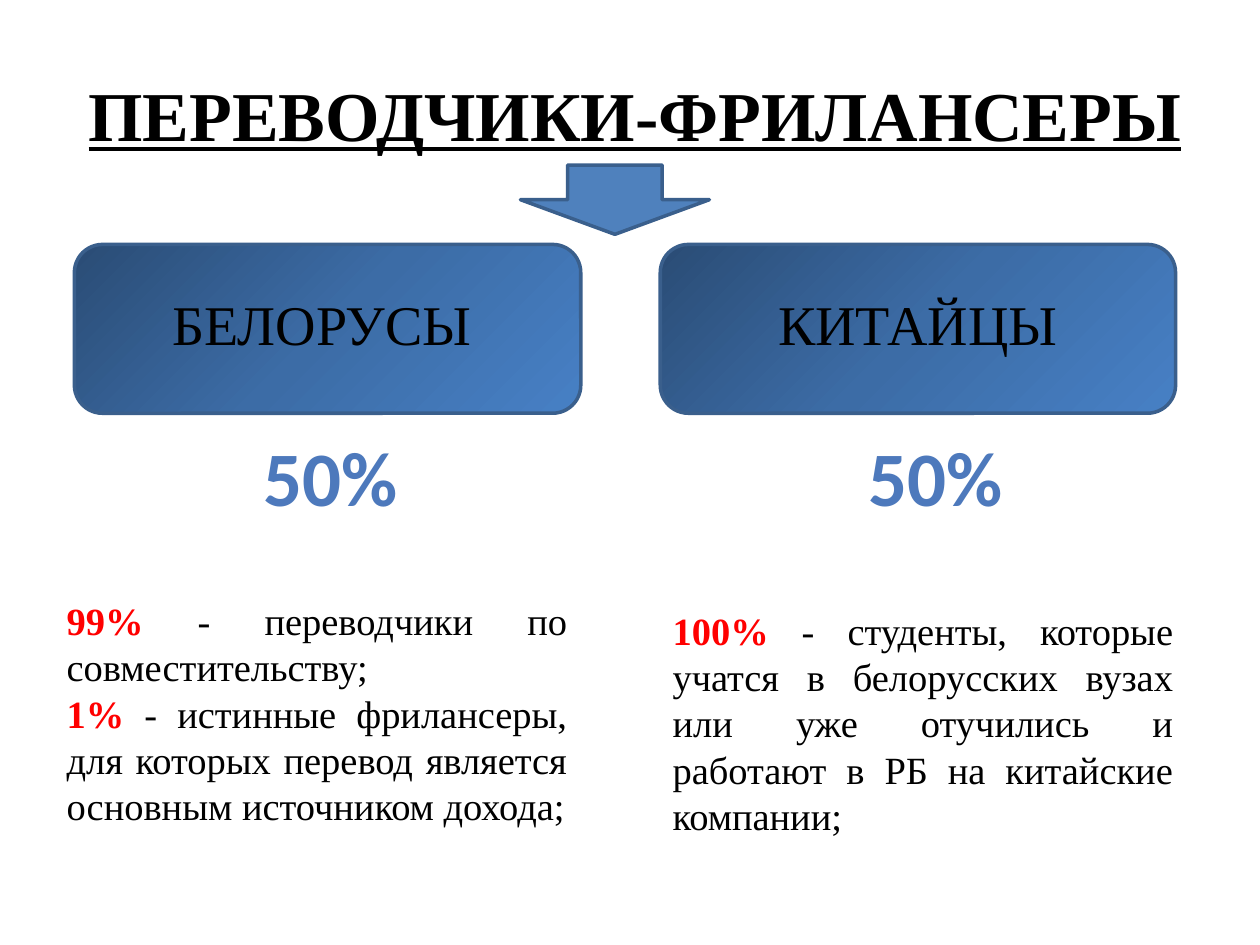
from copy import deepcopy

from pptx import Presentation
from pptx import util as u
from pptx.dml import color
from pptx.enum import shapes, text
from pptx.oxml import ns

SERIF = "Times New Roman"
BLACK, RED, BORDER, ARROW = "000000", "FF0000", "3A5F8C", "4F81BD"
CARD_STOPS = [(0, "2A4C75"), (0.5, "3C6CA6"), (1, "4780C5")]
SHARE_STOPS = [(0, "7494C9"), (0.49, "4D79BC"), (0.5, "346AAA"), (0.92, "325F94"), (1, "315D91")]

COLUMNS = [
    {
        "box": (42.5, 139.7, 289.4, 96.5),
        "label": "БЕЛОРУСЫ",
        "label_x": 28.1,
        "share_x": 84.9,
        "note_offset": (-11.5, 198),
        "notes": [
            ("99% ", "- переводчики по совместительству;"),
            ("1% ", "- истинные фрилансеры, для которых перевод является основным источником дохода;"),
        ],
    },
    {
        "box": (377.3, 139.7, 294.5, 96.5),
        "label": "КИТАЙЦЫ",
        "label_x": 33.8,
        "share_x": 95.7,
        "note_offset": (0, 203.7),
        "notes": [
            ("100% ", "- студенты, которые учатся в белорусских вузах или уже отучились "
                      "и работают в РБ на китайские компании;"),
        ],
    },
]


def rgb(value):
    """Return the colour for a hex string."""
    return color.RGBColor.from_string(value)


def points(box):
    """Return a box of numbers as lengths in points."""
    return [u.Pt(value) for value in box]


def fill_gradient(fill, parent, stops, angle):
    """Give a fill a gradient with any number of stops, its angle counted clockwise."""
    fill.gradient()
    fill.gradient_angle = 360 - angle
    stop_list = parent.find(ns.qn("a:gradFill")).find(ns.qn("a:gsLst"))
    while len(stop_list) < len(stops):
        stop_list.append(deepcopy(stop_list[0]))
    for stop, (position, value) in zip(fill.gradient_stops, stops):
        stop.position = position
        stop.color.rgb = rgb(value)


def add_outlined_shape(slide, kind, box):
    """Add a preset shape with the common border and no shadow."""
    shape = slide.shapes.add_shape(kind, *points(box))
    shape.shadow.inherit = False
    shape.line.color.rgb = rgb(BORDER)
    shape.line.width = u.Pt(2)
    return shape


def add_text(slide, box, paragraphs, alignment=text.PP_ALIGN.CENTER):
    """Add a text box whose paragraphs are lists of (wording, format) runs."""
    frame = slide.shapes.add_textbox(*points(box)).text_frame
    frame.word_wrap = True
    frame.auto_size = text.MSO_AUTO_SIZE.SHAPE_TO_FIT_TEXT
    for index, runs in enumerate(paragraphs):
        paragraph = frame.add_paragraph() if index else frame.paragraphs[0]
        paragraph.alignment = alignment
        for wording, style in runs:
            run = paragraph.add_run()
            run.text = wording
            for name, value in style.items():
                if name == "color":
                    run.font.color.rgb = rgb(value)
                else:
                    setattr(run.font, name, value)
    return frame


def add_header(slide, box):
    """Add the underlined title and the arrow below it."""
    left, top, width, height = box
    style = {"name": SERIF, "size": u.Pt(40), "bold": True, "underline": True, "color": BLACK}
    add_text(slide, box, [[("ПЕРЕВОДЧИКИ-ФРИЛАНСЕРЫ", style)]])
    arrow_box = (left + 260.7, top + 56.9, 108, 39.6)
    arrow = add_outlined_shape(slide, shapes.MSO_SHAPE.DOWN_ARROW, arrow_box)
    arrow.fill.solid()
    arrow.fill.fore_color.rgb = rgb(ARROW)


def add_column(slide, box, label, label_x, share_x, note_offset, notes):
    """Add a gradient card with its label, its share and its notes."""
    left, top, width, height = box
    card = add_outlined_shape(slide, shapes.MSO_SHAPE.ROUNDED_RECTANGLE, box)
    fill_gradient(card.fill, card._element.spPr, CARD_STOPS, 45)

    label_style = {"name": SERIF, "size": u.Pt(32), "color": BLACK}
    add_text(slide, (left + label_x, top + 22.3, 226.8, 46.1), [[(label, label_style)]])

    share_style = {"name": "Calibri", "size": u.Pt(44), "bold": True}
    share = add_text(slide, (left + share_x, top + 102.2, 123.1, 60.5), [[("50%", share_style)]])
    run = share.paragraphs[0].runs[0]
    fill_gradient(run.font.fill, run._r.rPr, SHARE_STOPS, 90)

    note_style = {"name": SERIF, "size": u.Pt(22)}
    figure_style = {**note_style, "bold": True, "color": RED}
    body_style = {**note_style, "bold": False, "color": BLACK}
    offset_x, offset_y = note_offset
    add_text(
        slide,
        (left + offset_x, top + offset_y, 300.2, 140.4),
        [[(figure, figure_style), (body, body_style)] for figure, body in notes],
        text.PP_ALIGN.JUSTIFY,
    )


def main():
    """Build and save the slide."""
    presentation = Presentation()
    presentation.slide_width, presentation.slide_height = u.Pt(720), u.Pt(540)
    slide = presentation.slides.add_slide(presentation.slide_layouts[6])
    add_header(slide, (36.7, 37.4, 652.3, 55.4))
    for column in COLUMNS:
        add_column(slide, **column)
    presentation.save("out.pptx")


if __name__ == "__main__":
    main()
